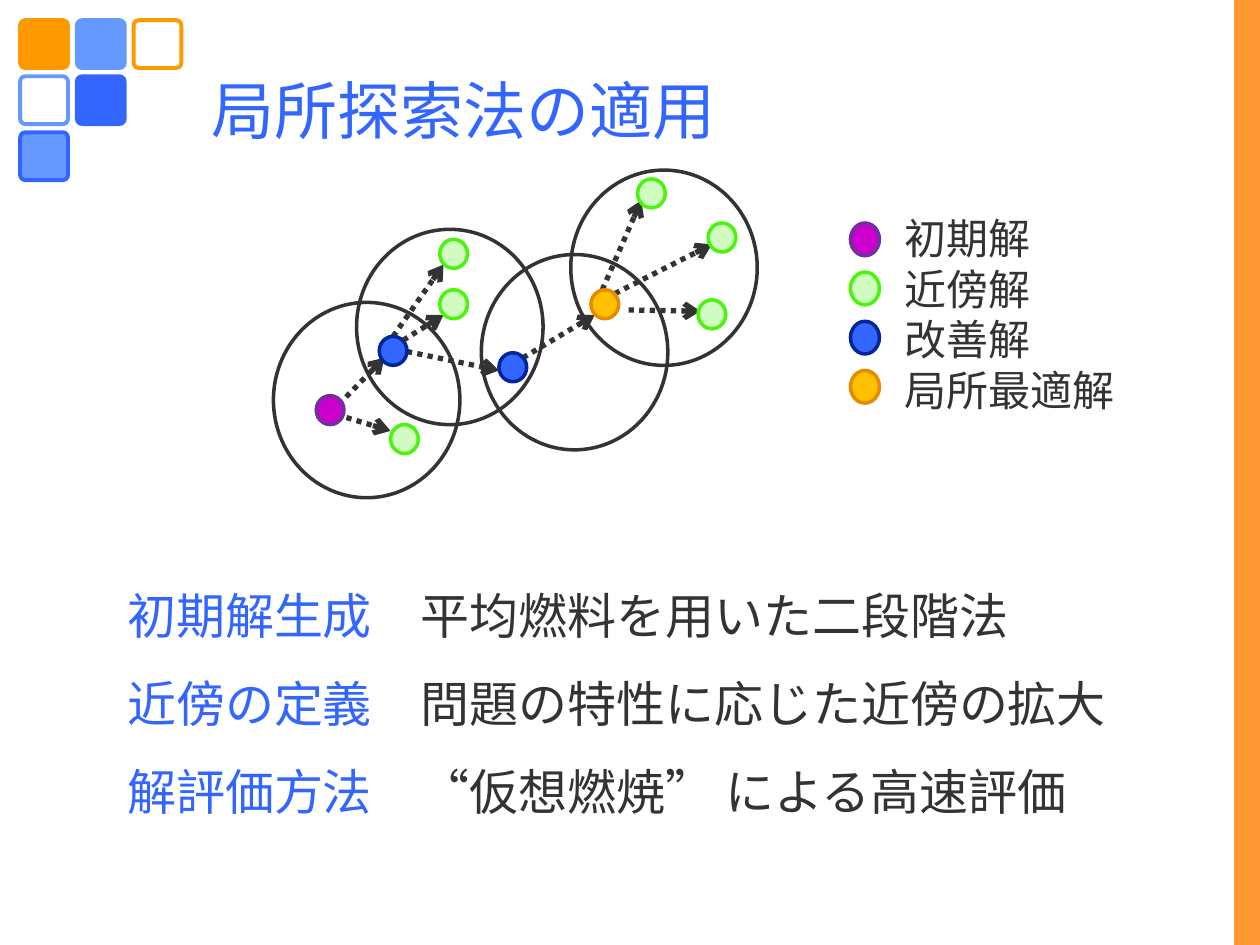
from lxml import etree
from pptx import Presentation
from pptx.dml.color import RGBColor
from pptx.enum.dml import MSO_LINE
from pptx.enum.shapes import MSO_CONNECTOR, MSO_SHAPE
from pptx.enum.text import MSO_ANCHOR, MSO_AUTO_SIZE, PP_ALIGN
from pptx.oxml.ns import qn
from pptx.util import Inches, Pt

COLUMNS, ROWS = 100, 75
WIDTH, HEIGHT = Inches(10), Inches(7.5)

RECTANGLE, ROUNDED = MSO_SHAPE.RECTANGLE, MSO_SHAPE.ROUNDED_RECTANGLE
OVAL, NODE = MSO_SHAPE.OVAL, MSO_SHAPE.FLOWCHART_CONNECTOR
STRAIGHT, DOTTED = MSO_CONNECTOR.STRAIGHT, MSO_LINE.ROUND_DOT
LEFT, TOP, MIDDLE = PP_ALIGN.LEFT, MSO_ANCHOR.TOP, MSO_ANCHOR.MIDDLE
NO_AUTOFIT = MSO_AUTO_SIZE.NONE

WHITE = RGBColor(0xFF, 0xFF, 0xFF)
INK = RGBColor(0x33, 0x33, 0x33)
BLUE = RGBColor(0x33, 0x66, 0xFF)
LIGHT_BLUE = RGBColor(0x66, 0x99, 0xFF)
NAVY = RGBColor(0x00, 0x26, 0x99)
ORANGE = RGBColor(0xFF, 0x99, 0x00)
BAR_ORANGE = RGBColor(0xFF, 0x99, 0x33)
GREEN = RGBColor(0x48, 0xF5, 0x0B)
MAGENTA = RGBColor(0xCC, 0x00, 0xCC)
PURPLE = RGBColor(0x70, 0x30, 0xA0)
GOLD = RGBColor(0xFF, 0xC0, 0x00)
AMBER = RGBColor(0xE7, 0x8A, 0x00)

TITLE_FONT, TEXT_FONT = "Calibri", "Noto Sans CJK JP"

SQUARES = [
    (0, 0, ORANGE, ORANGE), (1, 0, LIGHT_BLUE, LIGHT_BLUE), (2, 0, WHITE, ORANGE),
    (0, 1, WHITE, LIGHT_BLUE), (1, 1, BLUE, BLUE), (0, 2, LIGHT_BLUE, BLUE),
]
SOLUTION_STYLES = {
    "初期解": (MAGENTA, PURPLE, None),
    "近傍解": (GREEN, GREEN, 25),
    "改善解": (BLUE, NAVY, None),
    "局所最適解": (GOLD, AMBER, None),
}
NEIGHBOURHOODS = [(21.7, 24), (28.3, 18.2), (38.2, 20.2), (45.3, 13.5)]
SOLUTIONS = {
    "初期解": [(25.1, 31.4)],
    "近傍解": [(31, 33.7), (34.9, 23), (34.9, 19), (55.4, 23.8),
            (56.2, 17.7), (50.6, 14.2)],
    "改善解": [(30.1, 26.7), (39.6, 28)],
    "局所最適解": [(46.9, 23)],
}
MOVES = [
    ((26.7, 32.9), (31, 34.2)), ((26.3, 32.7), (30.5, 28.4)),
    ((32.3, 27.9), (39.6, 29.4)), ((32, 27), (35.2, 25)),
    ((31.2, 26.7), (35.2, 21)), ((41.5, 28.4), (47.2, 25)),
    ((48.8, 23.3), (56.5, 19.4)), ((49.9, 24.6), (55.6, 24.7)),
    ((47.8, 23), (50.9, 15.9)),
]
METHODS = [
    ("初期解生成", "平均燃料を用いた二段階法"),
    ("近傍の定義", "問題の特性に応じた近傍の拡大"),
    ("解評価方法", "“仮想燃焼” による高速評価"),
]


def grid(column, row):
    """Convert a column and row of the slide grid to lengths."""
    return int(WIDTH * column / COLUMNS), int(HEIGHT * row / ROWS)


def place(shape, column, row, columns, rows):
    """Move and size a shape on the slide grid."""
    shape.left, shape.top = grid(column, row)
    shape.width, shape.height = grid(columns, rows)


def add_figure(slide, kind, box, fill, line, weight, opacity=None):
    """Add a preset shape with its fill, outline and optional opacity."""
    shape = slide.shapes.add_shape(kind, *grid(*box[:2]), *grid(*box[2:]))
    shape.shadow.inherit = False
    shape.line.color.rgb = line
    shape.line.width = Pt(weight)
    if fill is None:
        shape.fill.background()
    else:
        shape.fill.solid()
        shape.fill.fore_color.rgb = fill
    if opacity is not None:
        color = shape.fill._xPr.find(qn("a:solidFill"))[0]
        etree.SubElement(color, qn("a:alpha"), val=str(opacity * 1000))
    return shape


def add_arrow(slide, start, end):
    """Add a dotted arrow between two grid points."""
    arrow = slide.shapes.add_connector(STRAIGHT, *grid(*start), *grid(*end))
    arrow.line.color.rgb = INK
    arrow.line.width = Pt(3)
    arrow.line.dash_style = DOTTED
    etree.SubElement(arrow.line._get_or_add_ln(), qn("a:tailEnd"), type="arrow")
    etree.SubElement(arrow._element.spPr, qn("a:effectLst"))


def add_text(paragraph, text, size, color=INK, font=TEXT_FONT, spacing=1.0):
    """Add a formatted run and set the line spacing of its paragraph."""
    run = paragraph.add_run()
    run.text = text
    run.font.size = Pt(size)
    run.font.color.rgb = color
    run.font.name = font
    etree.SubElement(run.font._element, qn("a:ea"), typeface=font)
    paragraph.alignment = LEFT
    paragraph.line_spacing = spacing
    paragraph.space_before = Pt(0)


def add_paragraphs(frame, count):
    """Return the given number of paragraphs of an empty text frame."""
    return [frame.paragraphs[0]] + [frame.add_paragraph() for _ in range(count - 1)]


def set_frame(frame, anchor):
    """Make a text frame wrap at a fixed size."""
    frame.word_wrap = True
    frame.auto_size = NO_AUTOFIT
    frame.vertical_anchor = anchor


def remove_bullet(paragraph):
    """Clear the bullet and indent of a list paragraph."""
    properties = paragraph._p.get_or_add_pPr()
    properties.set("marL", "0")
    properties.set("indent", "0")
    etree.SubElement(properties, qn("a:buNone"))


def add_decoration(slide):
    """Add the corner squares and the bar on the right edge."""
    for column, row, fill, line in SQUARES:
        box = (1.6 + 4.5 * column, 1.6 + 4.45 * row, 3.8, 3.8)
        square = add_figure(slide, ROUNDED, box, fill, line, 2.25)
        square.adjustments[0] = 0.11
    add_figure(slide, RECTANGLE, (98, 0, 2, ROWS), BAR_ORANGE, BAR_ORANGE, 0.75)


def add_solution(slide, name, box):
    """Add the marker of a named kind of solution."""
    fill, line, opacity = SOLUTION_STYLES[name]
    add_figure(slide, NODE, box, fill, line, 2, opacity)


def add_search_diagram(slide):
    """Add neighbourhood circles, moves and solutions."""
    for column, row in NEIGHBOURHOODS:
        add_figure(slide, OVAL, (column, row, 14.8, 15.5), None, INK, 2)
    for start, end in MOVES:
        add_arrow(slide, start, end)
    for name, points in SOLUTIONS.items():
        for column, row in points:
            add_solution(slide, name, (column, row, 2.2, 2.3))


def add_legend(slide):
    """Add the legend markers and their labels."""
    box = slide.shapes.add_textbox(*grid(70.8, 16.4), *grid(23.3, 17.2))
    set_frame(box.text_frame, TOP)
    paragraphs = add_paragraphs(box.text_frame, len(SOLUTION_STYLES))
    for index, (name, paragraph) in enumerate(zip(SOLUTION_STYLES, paragraphs)):
        add_text(paragraph, name, 24)
        add_solution(slide, name, (67.5, 17.7 + 3.9 * index, 2.3, 2.6))


def fill_title(title):
    """Place and write the title."""
    place(title, 15.8, 3.3, 76.7, 10.8)
    set_frame(title.text_frame, MIDDLE)
    add_text(title.text_frame.paragraphs[0], "局所探索法の適用", 36, BLUE, TITLE_FONT)


def fill_methods(body):
    """Place and write the list of methods."""
    place(body, 9.1, 43.6, 86.6, 22.2)
    set_frame(body.text_frame, TOP)
    paragraphs = add_paragraphs(body.text_frame, len(METHODS))
    for paragraph, (heading, method) in zip(paragraphs, METHODS):
        add_text(paragraph, heading, 28, BLUE, spacing=1.5)
        add_text(paragraph, "　" + method, 28, spacing=1.5)
        remove_bullet(paragraph)


def main():
    """Build and save the slide."""
    presentation = Presentation()
    presentation.slide_width, presentation.slide_height = WIDTH, HEIGHT
    slide = presentation.slides.add_slide(presentation.slide_layouts[1])
    add_decoration(slide)
    fill_title(slide.shapes.title)
    add_search_diagram(slide)
    add_legend(slide)
    fill_methods(slide.placeholders[1])
    presentation.save("out.pptx")


if __name__ == "__main__":
    main()
